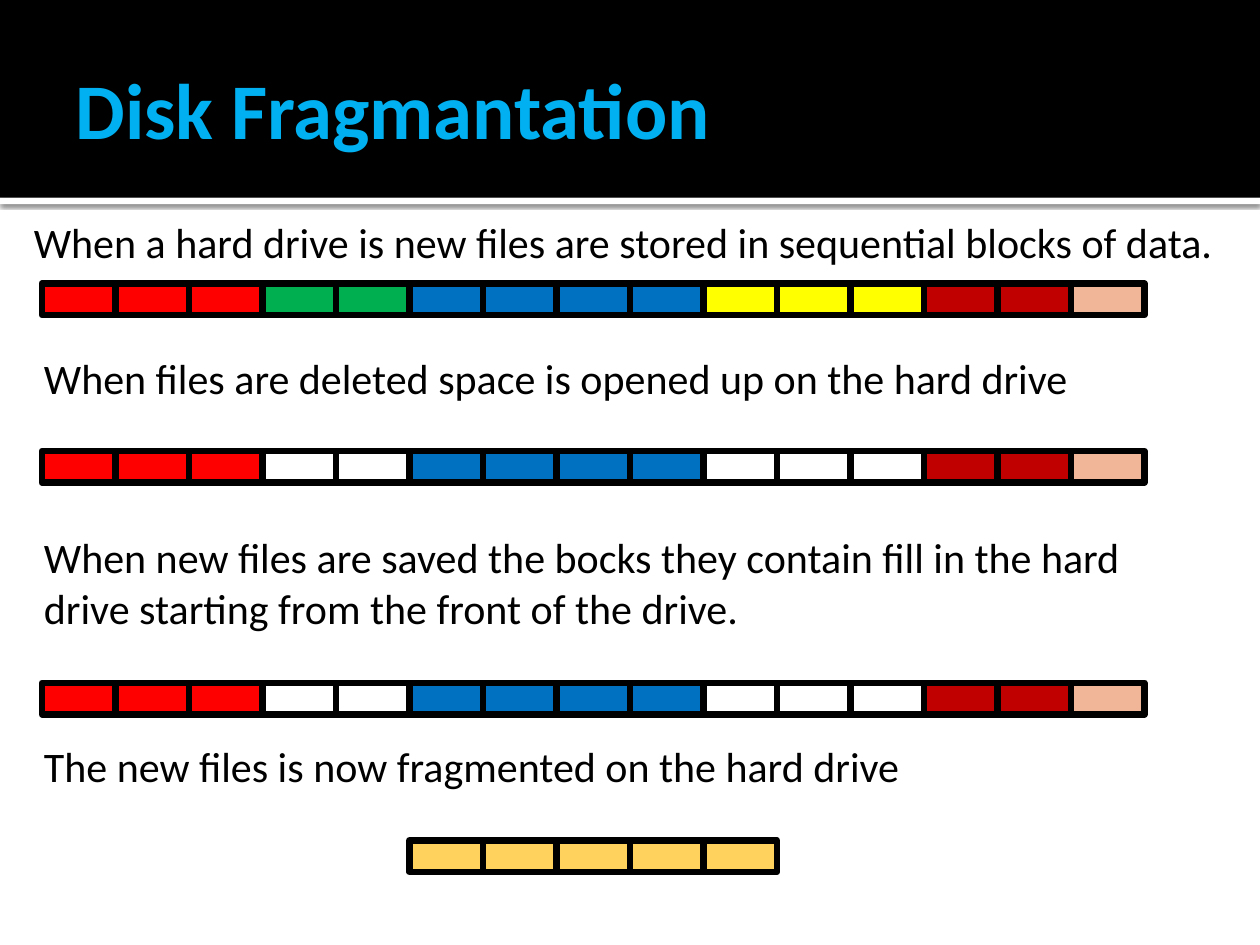
"""Builds a slide on how files become fragmented on a hard drive."""
import pptx
import pptx.dml.color
import pptx.enum.shapes
import pptx.enum.text
import pptx.oxml
import pptx.oxml.ns
import pptx.util
from pptx.util import Inches

RGBColor = pptx.dml.color.RGBColor
BLACK = RGBColor(0x00, 0x00, 0x00)
WHITE = RGBColor(0xFF, 0xFF, 0xFF)
SKY = RGBColor(0x00, 0xB0, 0xF0)
RED = RGBColor(0xFF, 0x00, 0x00)
GREEN = RGBColor(0x00, 0xB0, 0x50)
BLUE = RGBColor(0x00, 0x70, 0xC0)
YELLOW = RGBColor(0xFF, 0xFF, 0x00)
DARK_RED = RGBColor(0xC0, 0x00, 0x00)
PEACH = RGBColor(0xF1, 0xB6, 0x97)
GOLD = RGBColor(0xFF, 0xD2, 0x5D)

BLOCK_LEFT = 1 / 3
BLOCK_WIDTH = 7 / 12
BLOCK_HEIGHT = 0.25


def write(frame, text, size=24, color=BLACK, bold=False, wrap=True):
    frame.word_wrap = wrap
    paragraph = frame.paragraphs[0]
    paragraph.alignment = pptx.enum.text.PP_ALIGN.LEFT
    run = paragraph.add_run()
    run.text = text
    run.font.name = "Calibri"
    run.font.size = pptx.util.Pt(size)
    run.font.bold = bold
    run.font.color.rgb = color


def add_box(shapes, left, top, width, height, fill):
    box = shapes.add_shape(
        pptx.enum.shapes.MSO_SHAPE.RECTANGLE,
        Inches(left), Inches(top), Inches(width), Inches(height))
    box.shadow.inherit = False
    box.fill.solid()
    box.fill.fore_color.rgb = fill
    box.line.fill.background()
    return box


deck = pptx.Presentation()
deck.slide_width = Inches(10)
deck.slide_height = Inches(7.5)
slide = deck.slides.add_slide(deck.slide_layouts[5])

rule = add_box(slide.shapes, 0, 1.57, 10, 0.05, WHITE)
effects = rule.element.spPr.find(pptx.oxml.ns.qn("a:effectLst"))
effects.append(pptx.oxml.parse_xml(
    f'<a:outerShdw {pptx.oxml.ns.nsdecls("a")} blurRad="31750" dist="10160"'
    ' dir="5400000" algn="tl" rotWithShape="0"><a:srgbClr val="000000">'
    '<a:alpha val="60000"/></a:srgbClr></a:outerShdw>'))
add_box(slide.shapes, 0, 0, 10, 1.57, BLACK)

title = slide.shapes.title
title.left, title.top = Inches(0.5), Inches(0.17)
title.width, title.height = Inches(9), Inches(1.37)
title.text_frame.vertical_anchor = pptx.enum.text.MSO_ANCHOR.MIDDLE
title.text_frame.margin_right = Inches(0.05)
write(title.text_frame, "Disk Fragmantation", size=45, color=SKY, bold=True)
title.element.getparent().append(title.element)

full_drive = ([RED] * 3 + [GREEN] * 2 + [BLUE] * 4 + [YELLOW] * 3
              + [DARK_RED] * 2 + [PEACH])
opened_drive = [WHITE if color in (GREEN, YELLOW) else color
                for color in full_drive]
block_rows = [
    (2.25, 0, full_drive),
    (3.58, 0, opened_drive),
    (5.42, 0, opened_drive),
    (6.67, 7, [GOLD] * 3),
    (6.67, 5, [GOLD] * 2),
]
for top, first_column, colors in block_rows:
    file_blocks = slide.shapes.add_group_shape()
    for column, color in enumerate(colors, first_column):
        block = add_box(file_blocks.shapes, BLOCK_LEFT + column * BLOCK_WIDTH,
                        top, BLOCK_WIDTH, BLOCK_HEIGHT, color)
        block.line.color.rgb = BLACK
        block.line.width = pptx.util.Pt(3.78)

explanations = [
    (0.17, 1.67, 9.68, 0.51, False,
     "When a hard drive is new files are stored in sequential blocks of data."),
    (0.25, 2.75, 9.42, 0.51, True,
     "When files are deleted space is opened up on the hard drive"),
    (0.25, 4.17, 9.42, 0.91, True,
     "When new files are saved the bocks they contain fill in the hard drive "
     "starting from the front of the drive."),
    (0.25, 5.83, 9.42, 0.51, True,
     "The new files is now fragmented on the hard drive"),
]
for left, top, width, height, wrap, text in explanations:
    explanation = slide.shapes.add_textbox(
        Inches(left), Inches(top), Inches(width), Inches(height))
    explanation.text_frame.auto_size = (
        pptx.enum.text.MSO_AUTO_SIZE.SHAPE_TO_FIT_TEXT)
    write(explanation.text_frame, text, wrap=wrap)

deck.save("out.pptx")
